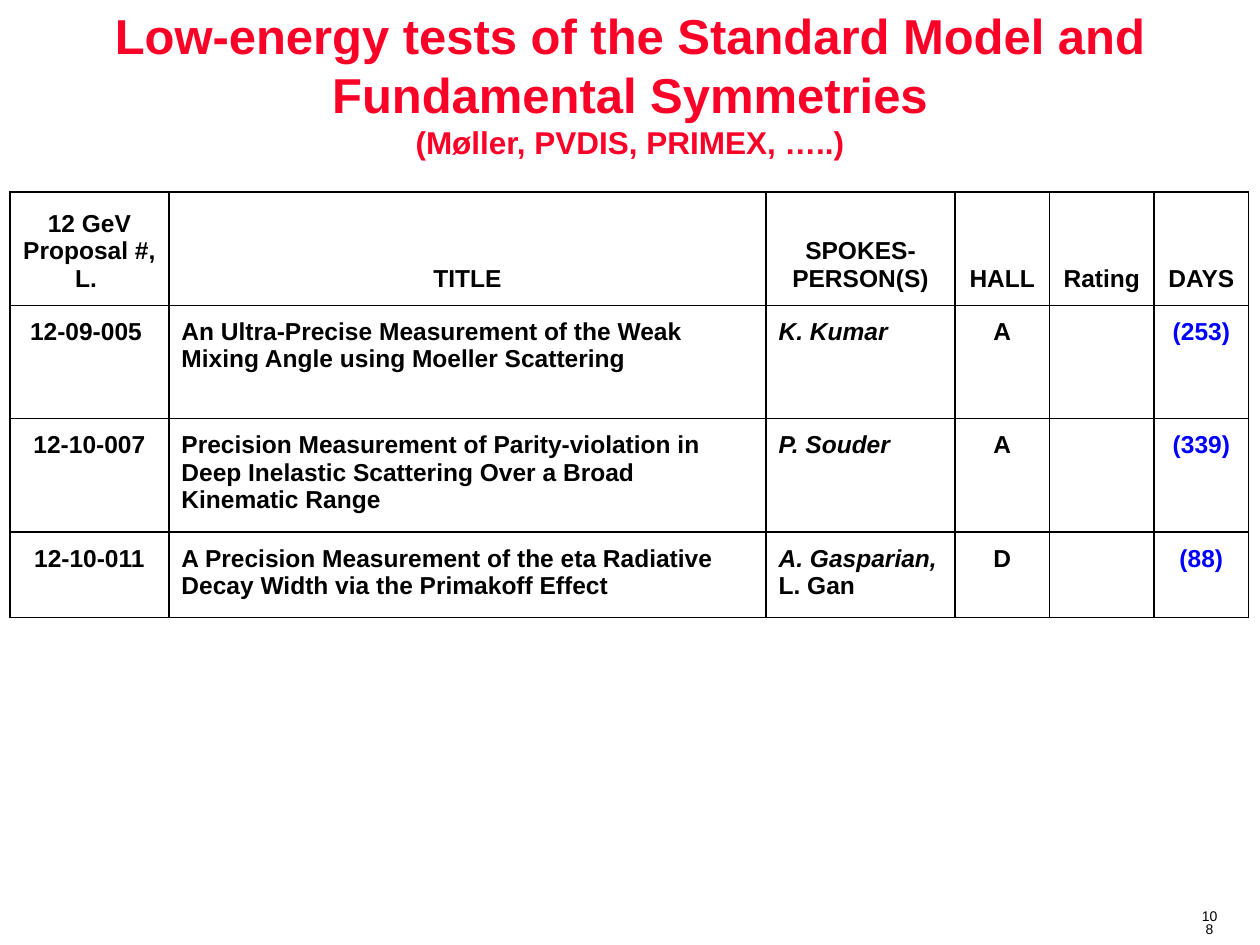
"""Build a slide listing low-energy proposals in a bordered table."""
from lxml.etree import SubElement as Sub
from pptx import Presentation
from pptx.dml.color import RGBColor as RGB
from pptx.enum.text import MSO_ANCHOR as Anchor, PP_ALIGN as Align
from pptx.oxml.ns import qn
from pptx.util import Inches, Pt

INK = {"text": "000000", "title": "FC0128", "days": "0000FF", "line": "000000"}
deck = Presentation()
deck.slide_width, deck.slide_height = Inches(10), Inches(7.5)
W, H = deck.slide_width, deck.slide_height
slide = deck.slides.add_slide(deck.slide_layouts[6])


def write(para, text, size, ink="text", bold=True, slant=False):
    run = para.add_run()
    run.text = text
    font = run.font
    font.name, font.size, font.bold, font.italic = "Arial", Pt(size), bold, slant
    font.color.rgb = RGB.from_string(INK[ink])


def edge(cell):
    props = cell._tc.get_or_add_tcPr()
    for spot, side in enumerate(("lnL", "lnR", "lnT", "lnB")):
        line = props.makeelement(qn(f"a:{side}"), {"w": str(Pt(1))})
        props.insert(spot, line)
        fill = Sub(line, qn("a:solidFill"))
        Sub(fill, qn("a:srgbClr"), val=INK["line"])


box = slide.shapes.add_textbox(int(W * 0.943), int(H * 0.957), int(W * 0.034), int(H * 0.028))
box.text_frame.word_wrap = True
para = box.text_frame.paragraphs[0]
para.alignment, para.line_spacing = Align.CENTER, 0.8
write(para, "108", 8, bold=False)

heads = [["12 GeV Proposal #,", "L. "], ["TITLE"], ["SPOKES-PERSON(S)"],
         ["HALL"], ["Rating"], ["DAYS"]]
plans = [
    ("12-09-005 ", "An Ultra-Precise Measurement of the Weak Mixing Angle using Moeller Scattering",
     "K. Kumar", "A", "", "(253)"),
    ("12-10-007", "Precision Measurement of Parity-violation in Deep Inelastic Scattering "
     "Over a Broad Kinematic Range", "P. Souder", "A", "", "(339)"),
    ("12-10-011", "A Precision Measurement of the eta Radiative Decay Width via the Primakoff Effect",
     "A. Gasparian,", "D", "", "(88)"),
]
cols = [0.126, 0.474, 0.15, 0.075, 0.083, 0.075]
rows = [0.12, 0.12, 0.12, 0.09]
grid = slide.shapes.add_table(len(rows), len(cols), int(W * 0.008), int(H * 0.203),
                              int(W * sum(cols)), int(H * sum(rows))).table
grid.first_row = grid.horz_banding = False
for col, share in zip(grid.columns, cols):
    col.width = int(W * share)
for row, share in zip(grid.rows, rows):
    row.height = int(H * share)

for cell in grid.iter_cells():
    cell.margin_left = cell.margin_right = cell.margin_top = cell.margin_bottom = Inches(0.1)
    cell.fill.background()
    edge(cell)

for c, lines in enumerate(heads):
    cell = grid.cell(0, c)
    cell.vertical_anchor = Anchor.BOTTOM
    for n, text in enumerate(lines):
        para = cell.text_frame.add_paragraph() if n else cell.text_frame.paragraphs[0]
        para.alignment = Align.CENTER
        write(para, text, 14)

for r, plan in enumerate(plans, 1):
    for c, text in enumerate(plan):
        para = grid.cell(r, c).text_frame.paragraphs[0]
        para.alignment = Align.LEFT if c in (1, 2) else Align.CENTER
        if text:
            write(para, text, 14, "days" if c == 5 else "text", slant=c == 2)
        else:
            para.font.size = Pt(14)

para = grid.cell(3, 2).text_frame.paragraphs[0]
para.add_line_break()
write(para, "L. Gan", 14)

title = slide.shapes.add_textbox(0, int(H * 0.01), W, int(H * 0.156)).text_frame
title.word_wrap, title.vertical_anchor = True, Anchor.MIDDLE
para = title.paragraphs[0]
para.alignment = Align.CENTER
write(para, "Low-energy tests of the Standard Model and Fundamental Symmetries", 28, "title")
para.add_line_break()
write(para, "(Møller, PVDIS, PRIMEX, …..)", 18, "title")

deck.save("out.pptx")
